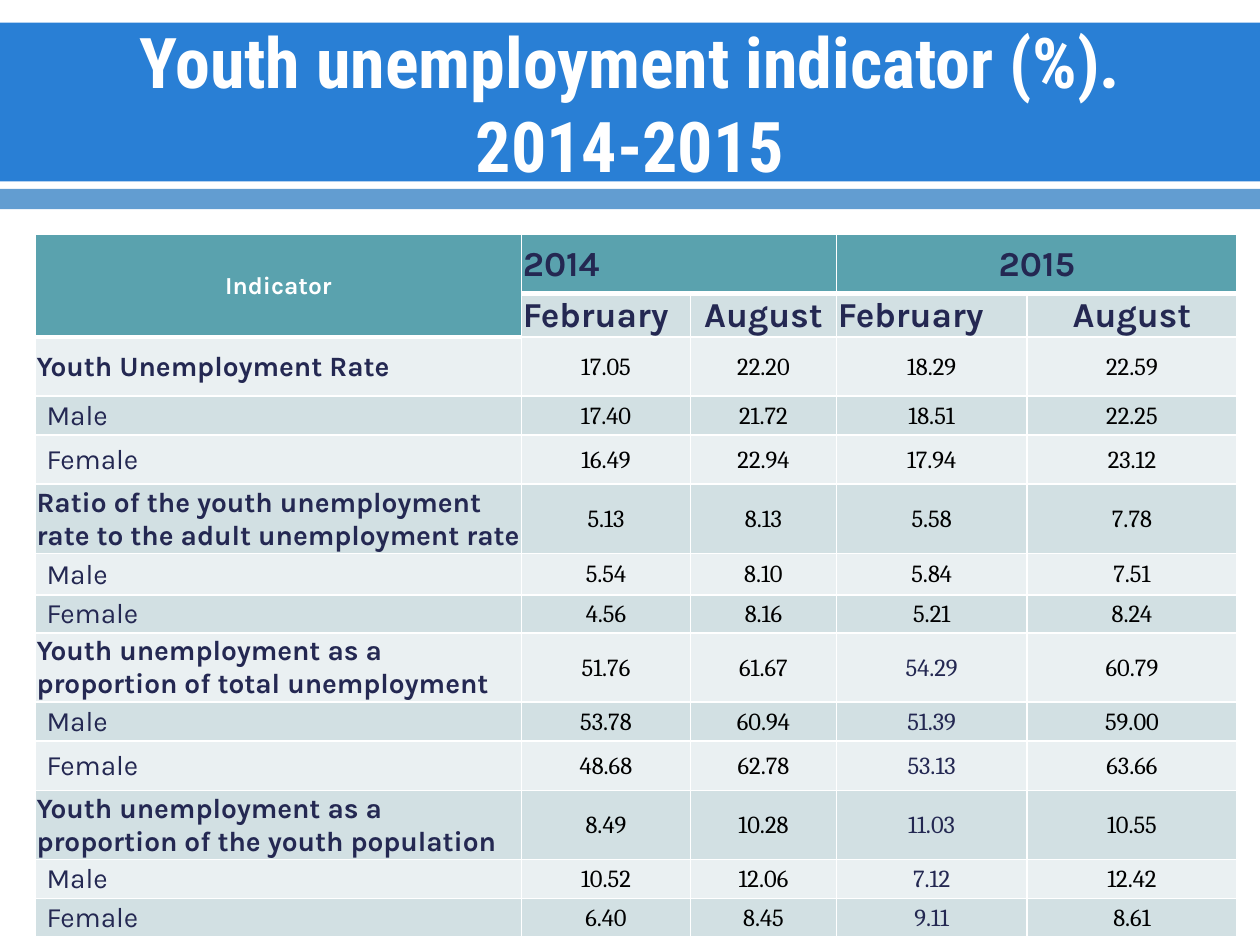
import pptx
import pptx.util
import pptx.dml.color
import pptx.enum.shapes
import pptx.enum.text
import pptx.oxml
import pptx.oxml.ns

Inches = pptx.util.Inches
Pt = pptx.util.Pt
ALIGN = pptx.enum.text.PP_ALIGN
MIDDLE = pptx.enum.text.MSO_ANCHOR.MIDDLE

WHITE, BLACK, NAVY = "FFFFFF", "000000", "242852"
TEAL, DARK_BAND, LIGHT_BAND = "5AA2AE", "D2E0E3", "EAF0F2"
COLS = [3.86, 1.34, 1.16, 1.51, 1.67]
ROWS = [0.47, 0.32, 0.47, 0.31, 0.39, 0.55, 0.33, 0.3, 0.55, 0.31, 0.39, 0.55, 0.31, 0.3]
MONTHS = ["February", "August", "February", "August"]
INDICATORS = [
    ("Youth Unemployment Rate", "17.05 22.20 18.29 22.59"),
    ("Male", "17.40 21.72 18.51 22.25"),
    ("Female", "16.49 22.94 17.94 23.12"),
    ("Ratio of the youth unemployment rate to the adult unemployment rate", "5.13 8.13 5.58 7.78"),
    ("Male", "5.54 8.10 5.84 7.51"),
    ("Female", "4.56 8.16 5.21 8.24"),
    ("Youth unemployment as a proportion of total unemployment", "51.76 61.67 54.29 60.79"),
    ("Male", "53.78 60.94 51.39 59.00"),
    ("Female", "48.68 62.78 53.13 63.66"),
    ("Youth unemployment as a proportion of the youth population", "8.49 10.28 11.03 10.55"),
    ("Male", "10.52 12.06 7.12 12.42"),
    ("Female", "6.40 8.45 9.11 8.61"),
]


def rgb(value):
    return pptx.dml.color.RGBColor.from_string(value)


class Builder:
    heading_font = "Roboto Condensed"
    label_font = "Karla"
    value_font = "Cambria"

    def __init__(self, slide):
        self.s = slide

    def text(self, tf, text, size, font, color, bold=False, centered=True):
        p = tf.paragraphs[0]
        p.alignment = ALIGN.CENTER if centered else ALIGN.LEFT
        r = p.add_run()
        r.text = text
        r.font.size = Pt(size)
        r.font.name = font
        r.font.bold = bold
        r.font.color.rgb = rgb(color)

    def band(self, top, height, color):
        sp = self.s.shapes.add_shape(pptx.enum.shapes.MSO_SHAPE.RECTANGLE,
                                     0, Inches(top), Inches(10), Inches(height))
        sp.shadow.inherit = False
        sp.fill.solid()
        sp.fill.fore_color.rgb = rgb(color)
        sp.line.fill.background()

    def title(self, text):
        sp = self.s.shapes.add_textbox(Inches(0.5), Inches(0.2), Inches(9), Inches(1.22))
        tf = sp.text_frame
        tf.word_wrap = True
        tf.vertical_anchor = MIDDLE
        self.text(tf, text, 40, self.heading_font, WHITE, bold=True)

    def table(self, left, top, cols, rows):
        frame = self.s.shapes.add_table(len(rows), len(cols), Inches(left), Inches(top),
                                        Inches(sum(cols)), Inches(sum(rows)))
        table = frame.table
        for column, width in zip(table.columns, cols):
            column.width = Inches(width)
        for row, height in zip(table.rows, rows):
            row.height = Inches(height)
        return table

    def borders(self, cell, top=1, bottom=1):
        tcPr = cell._tc.get_or_add_tcPr()
        for side, width in (("L", 1), ("R", 1), ("T", top), ("B", bottom)):
            tcPr.append(pptx.oxml.parse_xml(
                f'<a:ln{side} {pptx.oxml.ns.nsdecls("a")} w="{Pt(width)}">'
                f'<a:solidFill><a:srgbClr val="{WHITE}"/></a:solidFill></a:ln{side}>'))

    def cell(self, cell, fill, indent=0.01, top=1, bottom=1):
        self.borders(cell, top, bottom)
        cell.fill.solid()
        cell.fill.fore_color.rgb = rgb(fill)
        cell.vertical_anchor = MIDDLE
        cell.margin_left = Inches(indent)
        cell.margin_top = cell.margin_right = Inches(0.01)
        cell.margin_bottom = 0

    def header(self, table):
        for col in range(len(COLS)):
            self.cell(table.cell(0, col), TEAL, bottom=3)
            self.cell(table.cell(1, col), DARK_BAND if col else TEAL,
                      top=3, bottom=1 if col else 3)
        for first, last in (((0, 0), (1, 0)), ((0, 1), (0, 2)), ((0, 3), (0, 4))):
            table.cell(*first).merge(table.cell(*last))
        self.text(table.cell(0, 0).text_frame, "Indicator", 14, self.label_font, WHITE, bold=True)
        for col, year in ((1, "2014"), (3, "2015")):
            self.text(table.cell(0, col).text_frame, year, 20, self.label_font, NAVY,
                      bold=True, centered=year == "2015")
        for col, month in enumerate(MONTHS, 1):
            self.text(table.cell(1, col).text_frame, month, 20, self.label_font, NAVY,
                      bold=True, centered=month == "August")

    def indicator(self, table, row, label, values):
        fill = DARK_BAND if row % 2 else LIGHT_BAND
        is_group = label not in ("Male", "Female")
        name = table.cell(row, 0)
        self.cell(name, fill, 0.01 if is_group else 0.09, top=3 if row == 2 else 1)
        self.text(name.text_frame, label, 16, self.label_font, NAVY,
                  bold=is_group, centered=False)
        for col, value in enumerate(values.split(), 1):
            cell = table.cell(row, col)
            self.cell(cell, fill)
            color = NAVY if col == 3 and row >= 8 else BLACK
            self.text(cell.text_frame, value, 14, self.value_font, color)


def main():
    prs = pptx.Presentation()
    prs.slide_width = Inches(10)
    prs.slide_height = Inches(7.5)
    b = Builder(prs.slides.add_slide(prs.slide_layouts[6]))
    b.band(0.18, 1.26, "297FD5")
    b.band(1.5, 0.16, "629DD1")
    b.title("Youth unemployment indicator (%). 2014-2015")
    table = b.table(0.28, 1.86, COLS, ROWS)
    b.header(table)
    for row, (label, values) in enumerate(INDICATORS, 2):
        b.indicator(table, row, label, values)
    prs.save("out.pptx")


if __name__ == "__main__":
    main()
